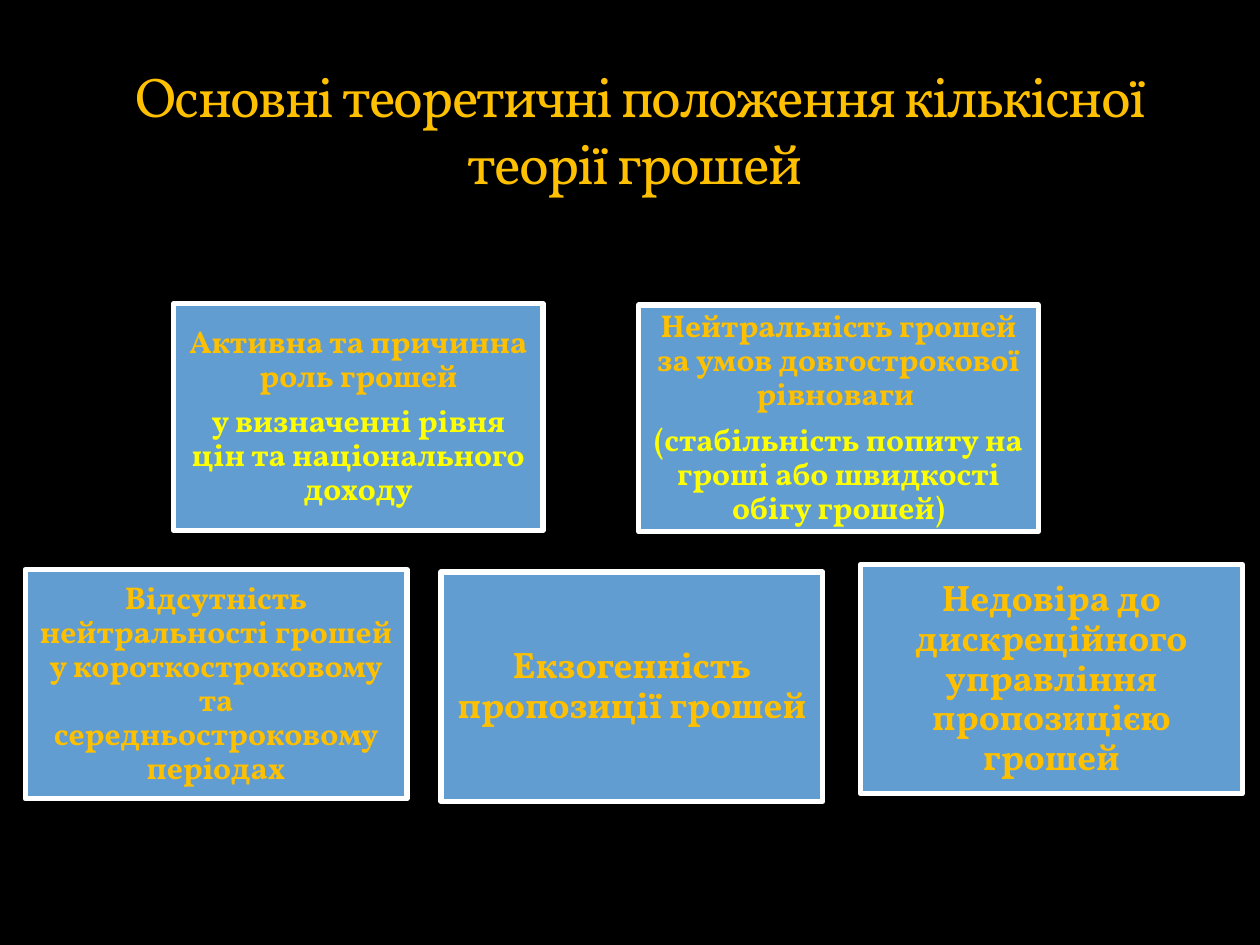
"""Build the slide on the main propositions of the quantity theory of money."""
from pptx import Presentation
from pptx import util as u
from pptx.dml.color import RGBColor
from pptx.enum import shapes, text

COLORS = {"night": "000000", "card": "629DD1", "border": "FFFFFF",
          "gold": "FFC000", "yellow": "FFFF00"}


def write(paragraph, words, size=18, color="gold", bold=True, line=0.9, after=0.35, tracking=0):
    paragraph.alignment = text.PP_ALIGN.CENTER
    paragraph.line_spacing = line
    paragraph.space_before = u.Pt(0)
    paragraph.space_after = u.Pt(round(size * after, 1))
    run = paragraph.add_run()
    run.text = words
    run.font.name = "Vollkorn"
    run.font.size = u.Pt(size)
    run.font.bold = bold
    run.font.color.rgb = RGBColor.from_string(COLORS[color])
    if tracking:
        run.font._element.set("spc", str(tracking * 100))


deck = Presentation()
deck.slide_width, deck.slide_height = u.Inches(10), u.Inches(7.5)
column, row = deck.slide_width / 100, deck.slide_height / 100
slide = deck.slides.add_slide(deck.slide_layouts[5])
slide.background.fill.solid()
slide.background.fill.fore_color.rgb = RGBColor.from_string(COLORS["night"])

heading = slide.shapes.title
heading.left, heading.top = int(6.7 * column), int(5.87 * row)
heading.width, heading.height = int(88.2 * column), int(15.73 * row)
heading.text_frame.word_wrap = True
heading.text_frame.auto_size = text.MSO_AUTO_SIZE.NONE
heading.text_frame.vertical_anchor = text.MSO_ANCHOR.TOP
write(heading.text_frame.paragraphs[0], "Основні теоретичні положення кількісної теорії грошей ",
      size=32, bold=False, line=1.0, after=0, tracking=-1)

upper, lower = 24, 24.27
propositions = [
    (13.8, 32.13, 29.3, upper, 18, ["Активна та причинна роль грошей",
                                    "у визначенні рівня цін та національного доходу"]),
    (50.7, 32.27, 31.7, upper, 18, ["Нейтральність грошей за умов довгострокової рівноваги ",
                                    "(стабільність попиту на гроші або швидкості обігу грошей)"]),
    (2, 60.27, 30.3, lower, 18, ["Відсутність нейтральності грошей у короткостроковому "
                                 "та середньостроковому періодах"]),
    (35, 60.53, 30.3, lower, 21, ["Екзогенність пропозиції грошей"]),
    (68.3, 59.73, 30.3, lower, 21, ["Недовіра до дискреційного управління пропозицією грошей"]),
]

for left, top, width, height, size, statements in propositions:
    card = slide.shapes.add_shape(shapes.MSO_SHAPE.RECTANGLE, int(left * column), int(top * row),
                                  int(width * column), int(height * row))
    card.shadow.inherit = False
    card.fill.solid()
    card.fill.fore_color.rgb = RGBColor.from_string(COLORS["card"])
    card.line.color.rgb = RGBColor.from_string(COLORS["border"])
    card.line.width = u.Pt(3)
    frame = card.text_frame
    frame.word_wrap = True
    frame.vertical_anchor = text.MSO_ANCHOR.MIDDLE
    inset = u.Inches(0.07 if size == 18 else 0.09)
    frame.margin_left = frame.margin_right = frame.margin_top = frame.margin_bottom = inset
    for index, (statement, color) in enumerate(zip(statements, ["gold", "yellow"])):
        paragraph = frame.add_paragraph() if index else frame.paragraphs[0]
        write(paragraph, statement, size=size, color=color)

deck.save("out.pptx")
